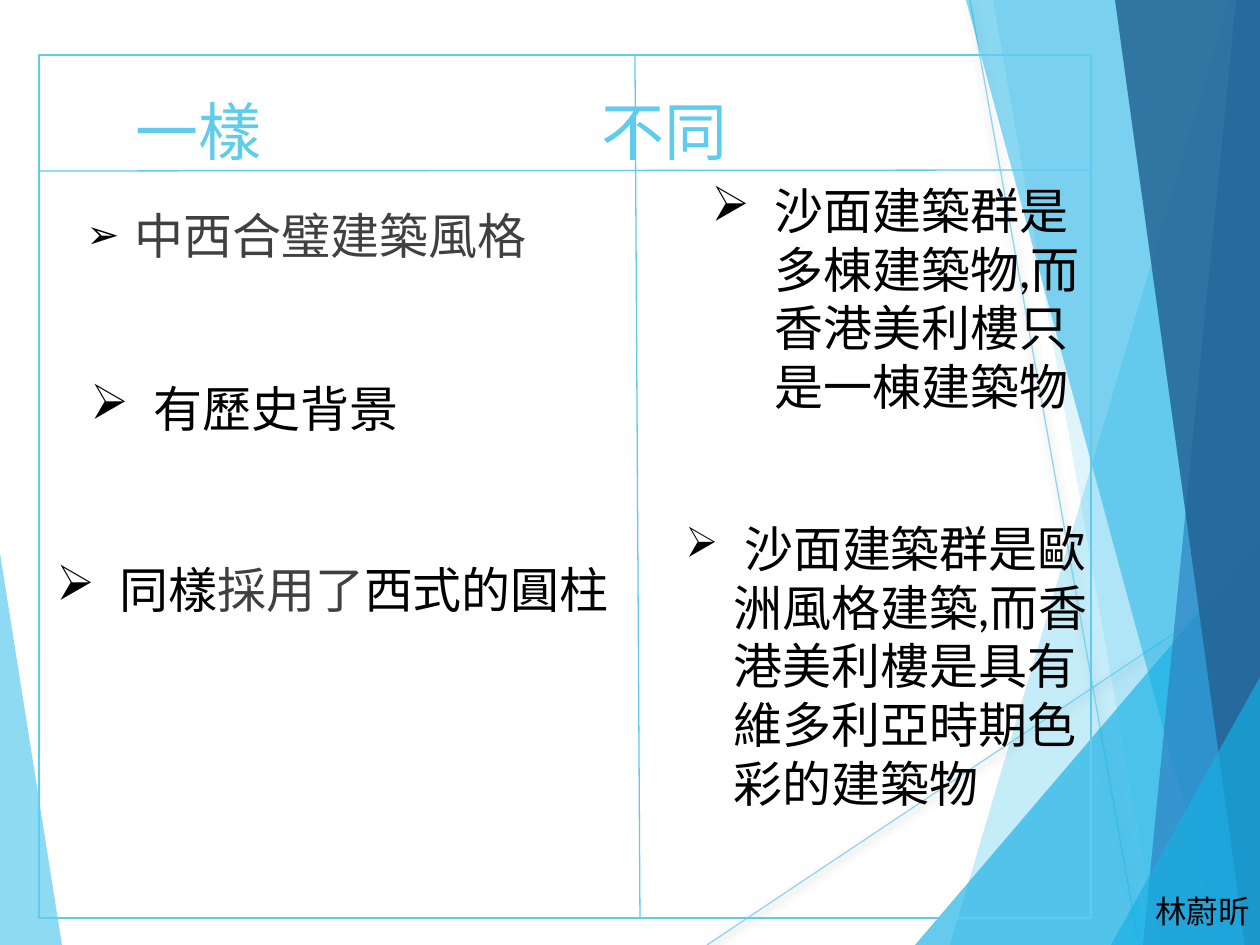
from lxml.etree import SubElement as Sub
from pptx import Presentation
from pptx.dml.color import RGBColor as RGB
from pptx.enum.shapes import MSO_CONNECTOR as Conn, MSO_SHAPE as Kind
from pptx.enum.text import MSO_ANCHOR as Anchor, MSO_AUTO_SIZE as Auto, PP_ALIGN as Align
from pptx.oxml.ns import qn
from pptx.util import Pt

WIDE, HIGH = 1260, 945
SCALE = 914400 / 126

SKY = RGB(0x5F, 0xCB, 0xEF)
CYAN = RGB(0x17, 0xB0, 0xE4)
BLUE = RGB(0x2E, 0x83, 0xC3)
NAVY = RGB(0x22, 0x62, 0x92)
GREY = RGB(0x40, 0x40, 0x40)
BLACK = RGB(0, 0, 0)
LATO, NOTO = "Lato", "Noto Sans CJK TC"

LEFT = (SKY, 70, [(0, 553), (62, HIGH), (0, HIGH)])
RAYS = [((707, HIGH), (WIDE, 576)), ((970, 0), (1139, HIGH))]
FACETS = [
    (SKY, 36, [(1229, 0), (950, HIGH), (WIDE, HIGH), (WIDE, 0)]),
    (SKY, 20, [(993, 0), (1158, HIGH), (WIDE, HIGH), (WIDE, 0)]),
    (CYAN, 66, [(915, HIGH), (WIDE, 541), (WIDE, HIGH)]),
    (CYAN, 50, [(966, 0), (1222, HIGH), (WIDE, HIGH), (WIDE, 0)]),
    (BLUE, 70, [(1236, 0), (1143, HIGH), (WIDE, HIGH), (WIDE, 0)]),
    (NAVY, 82, [(1115, 0), (1245, HIGH), (WIDE, HIGH), (WIDE, 0)]),
    (CYAN, 66, [(1111, HIGH), (WIDE, 677), (WIDE, HIGH)]),
]

TITLE = dict(box=(123, 86, 883, 181), tab=466,
             runs=[("一樣\t不同", 36, SKY, LATO)])
BODY = dict(box=(74, 199, 515, 127), hang=(48, 48), size=80,
            runs=[("中西合璧建築風格", 28, GREY, LATO)])
NOTES = [
    dict(box=(699, 174, 397, 310), hang=(63, 63),
         runs=[("沙面建築群是多棟建築物,而香港美利樓只是一棟建築物", 28, BLACK, LATO)]),
    dict(box=(15, 372, 446, 72), hang=(126, 63), level=1,
         runs=[("有歷史背景", 28, BLACK, LATO)]),
    dict(box=(673, 512, 446, 310), hang=(48, 48),
         runs=[(" ", 24, BLACK, LATO),
               ("沙面建築群是", 28, BLACK, LATO),
               ("歐洲風格建築", 28, BLACK, NOTO),
               (",而香港美利樓是具有維多利亞時期色彩的建築物", 28, BLACK, LATO)]),
    dict(box=(44, 553, 615, 72), hang=(63, 63),
         runs=[("同樣", 28, BLACK, LATO),
               ("採用了", 28, GREY, LATO),
               ("西式的圓柱", 28, BLACK, LATO)]),
]
NAME = dict(box=(1143, 886, 121, 50), wrap=False,
            runs=[("林蔚昕", 18, BLACK, LATO)])
FRAME = (39, 55, 1052, 863)
RULES = [((635, 55), (640, 918)), ((39, 171), (1091, 170))]


def emu(*nums):
    return [round(num * SCALE) for num in nums]


def fade(fill, part):
    node = next(fill.iter(qn("a:srgbClr")))
    Sub(node, qn("a:alpha"), val=str(part * 1000))


def facet(tone, part, spots):
    spots = [emu(*spot) for spot in spots]
    pen = shapes.build_freeform(*spots[0], scale=1.0)
    pen.add_line_segments(spots[1:], close=True)
    shape = pen.convert_to_shape()
    shape.shadow.inherit = False
    shape.fill.solid()
    shape.fill.fore_color.rgb = tone
    shape.line.fill.background()
    fade(shape.element.spPr, part)


def rule(start, end, ray=False):
    line = shapes.add_connector(Conn.STRAIGHT, *emu(*start, *end))
    line.line.color.rgb = SKY
    line.line.width = Pt(0.75)
    if ray:
        fade(line.element.spPr, 70)
    glow = Sub(line.element.spPr, qn("a:effectLst"))
    if ray:
        cast = Sub(glow, qn("a:outerShdw"), blurRad=str(Pt(5)), dist=str(Pt(2)),
                   dir="5400000", rotWithShape="0")
        tint = Sub(cast, qn("a:srgbClr"), val="000000")
        Sub(tint, qn("a:alpha"), val="43000")


def place(shape, data, auto):
    for key, val in zip(("left", "top", "width", "height"), emu(*data["box"])):
        setattr(shape, key, val)
    frame = shape.text_frame
    look = dict(word_wrap=data.get("wrap", True), auto_size=auto,
                vertical_anchor=Anchor.TOP)
    for key, val in look.items():
        setattr(frame, key, val)
    para = frame.paragraphs[0]
    para.alignment = Align.LEFT
    para.level = data.get("level", 0)
    props = para._p.get_or_add_pPr()
    if "hang" in data:
        edge, hang = emu(*data["hang"])
        props.set("marL", str(edge))
        props.set("indent", str(-hang))
        if "size" in data:
            para.space_before = Pt(10)
            tint = Sub(props, qn("a:buClr"))
            Sub(tint, qn("a:srgbClr"), val=str(BLACK))
            Sub(props, qn("a:buSzPct"), val=str(data["size"] * 1000))
        Sub(props, qn("a:buChar"), char="➢")
    if "tab" in data:
        tabs = Sub(props, qn("a:tabLst"))
        Sub(tabs, qn("a:tab"), pos=str(emu(data["tab"])[0]), algn="l")
    for words, size, tone, face in data["runs"]:
        run = para.add_run()
        run.text = words
        for key, val in dict(size=Pt(size), name=face).items():
            setattr(run.font, key, val)
        run.font.color.rgb = tone
        Sub(run._r.get_or_add_rPr(), qn("a:ea"), typeface=LATO)


def note(data):
    place(shapes.add_textbox(*emu(*data["box"])), data, Auto.SHAPE_TO_FIT_TEXT)


deck = Presentation()
deck.slide_width, deck.slide_height = emu(WIDE, HIGH)
slide = deck.slides.add_slide(deck.slide_layouts[1])
shapes = slide.shapes

facet(*LEFT)
for ray in RAYS:
    rule(*ray, ray=True)
for item in FACETS:
    facet(*item)

for holder, data in zip(list(slide.placeholders), (TITLE, BODY)):
    place(holder, data, Auto.NONE)
    shapes.element.append(holder.element)
for data in NOTES:
    note(data)

border = shapes.add_shape(Kind.RECTANGLE, *emu(*FRAME))
border.shadow.inherit = False
border.fill.background()
border.line.color.rgb = SKY
border.line.width = Pt(1.25)
for ends in RULES:
    rule(*ends)
note(NAME)

deck.save("out.pptx")
